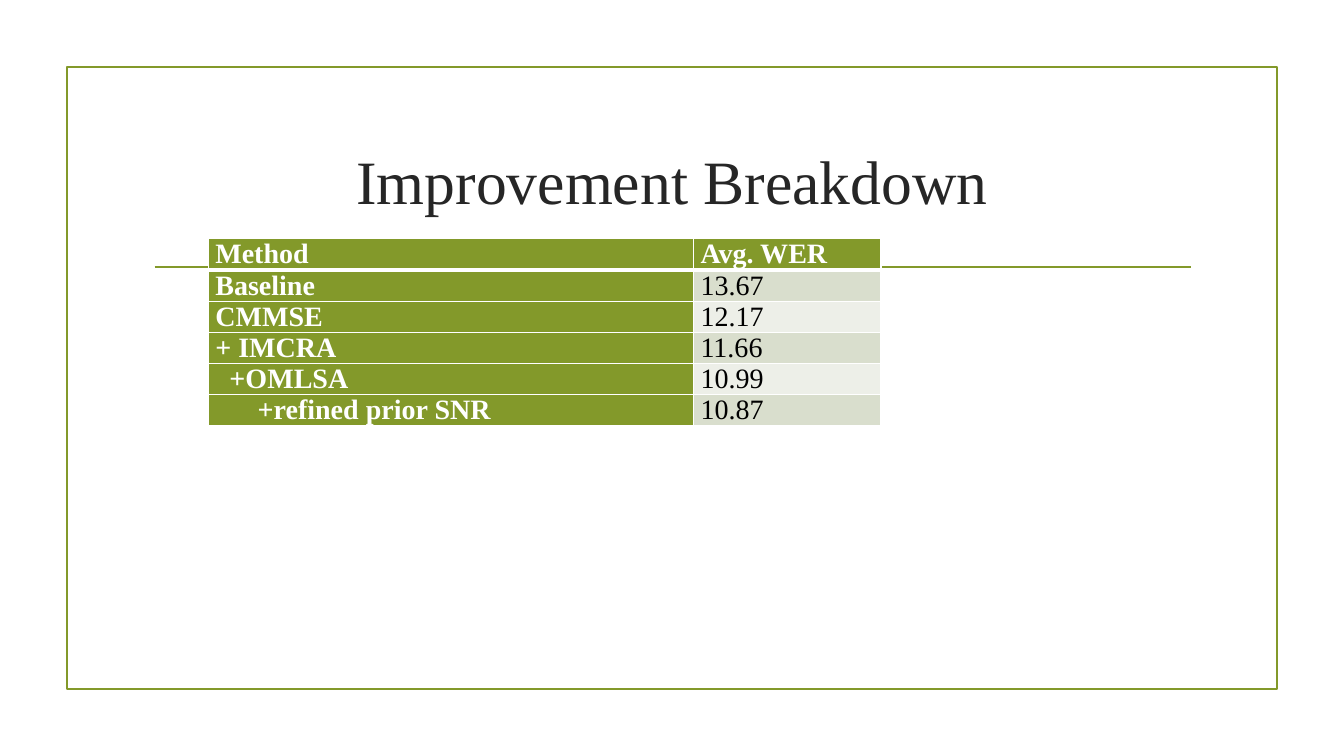
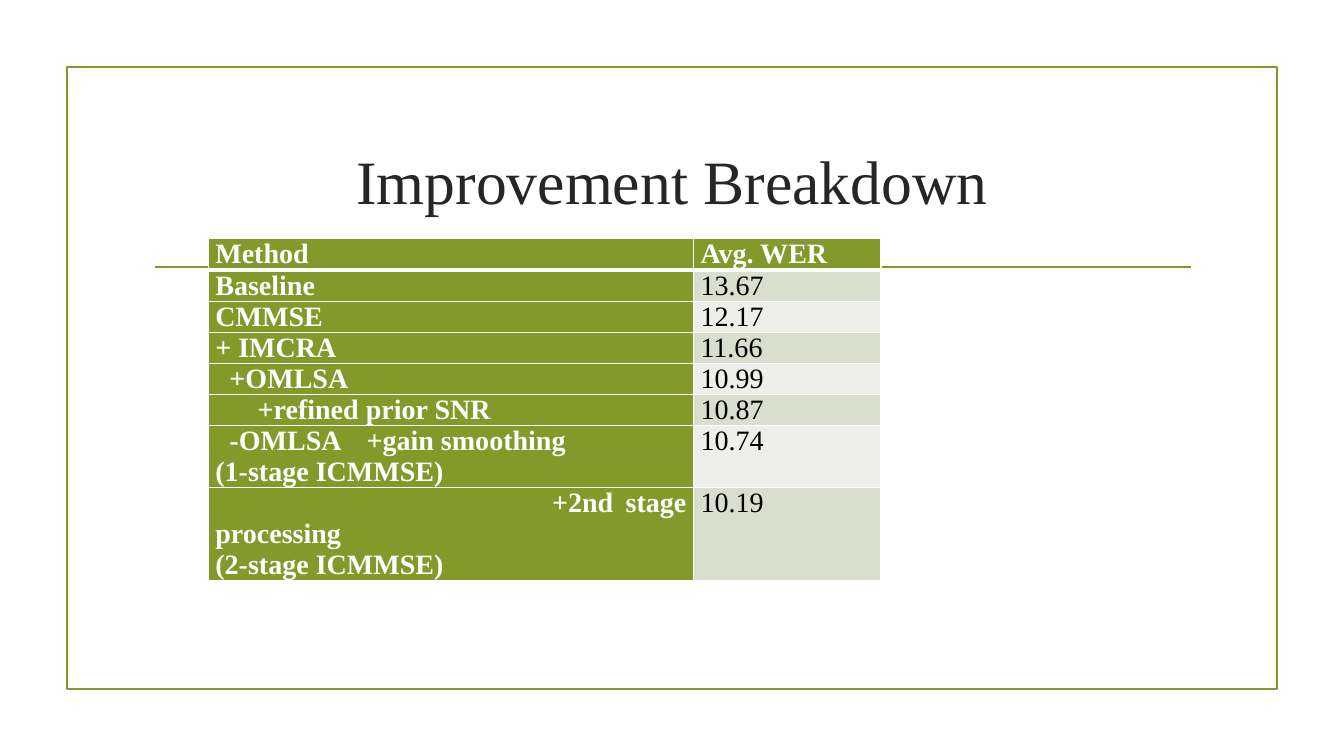
from lxml.etree import SubElement
from pptx import Presentation
from pptx.dml.color import RGBColor
from pptx.enum.shapes import MSO_CONNECTOR as Connector, MSO_SHAPE as Shape
from pptx.enum.text import MSO_ANCHOR as Anchor, PP_ALIGN as Align
from pptx.oxml import parse_xml
from pptx.oxml.ns import nsdecls, qn
from pptx.util import Inches, Pt

GREEN, INK, WHITE, BLACK = "83992A", "262626", "FFFFFF", "000000"
BANDS = ["D9DECD", "EDEFE8"]
FONT = "Times New Roman"

deck = Presentation()
deck.slide_width, deck.slide_height = Inches(13.33), Inches(7.5)
col, row = deck.slide_width / 100, deck.slide_height / 100  # 100 x 100 grid


def paint(target, color):
    """Give a fill or a line one solid colour."""
    target.solid()
    target.fore_color.rgb = RGBColor.from_string(color)


def write(paragraph, text, size, color, bold, align):
    paragraph.alignment = align
    run = paragraph.add_run()
    run.text = text
    run.font.name, run.font.size, run.font.bold = FONT, Pt(size), bold
    paint(run.font.fill, color)


# Shared layout: title position, frame and rule
layout = deck.slide_layouts[5]
title_area, *footers = layout.placeholders
for footer in footers:
    footer.element.getparent().remove(footer.element)
title_area.left, title_area.top = int(10.65 * col), int(14.3 * row)
title_area.width, title_area.height = int(78.75 * col), int(19.1 * row)
title_area.text_frame.vertical_anchor = Anchor.MIDDLE

slides = [deck.slides.add_slide(layout) for _ in range(2)]
drawing = slides[0].shapes
frame = drawing.add_shape(Shape.RECTANGLE, int(5 * col), int(8.9 * row),
                          int(90 * col), int(82.3 * row))
frame.shadow.inherit = False
frame.fill.background()
rule = drawing.add_connector(Connector.STRAIGHT, int(11.5 * col), int(35.3 * row),
                             int(88.6 * col), int(35.3 * row))
SubElement(rule.element.spPr, qn("a:effectLst"))
for ornament in (frame, rule):
    paint(ornament.line.fill, GREEN)
    ornament.line.width = Pt(1.25)
    layout.shapes.element.append(ornament.element)  # move to the layout

# Results: method lines, first-line indent in inches, average WER
results = [
    (["Method"], 0, "Avg. WER"),
    (["Baseline"], 0, "13.67"),
    (["CMMSE"], 0, "12.17"),
    (["+ IMCRA"], 0, "11.66"),
    (["+OMLSA"], 0.14, "10.99"),
    (["+refined prior SNR"], 0.42, "10.87"),
    (["-OMLSA\t+gain smoothing", "(1-stage ICMMSE)"], 0.14, "10.74"),
    (["+2nd stage processing", "(2-stage ICMMSE)"], 3.34, "10.19"),
]
GAIN_TAB = Inches(1.52)

for slide, row_count in zip(slides, (6, 8)):
    write(slide.shapes.title.text_frame.paragraphs[0], "Improvement Breakdown",
          44, INK, False, Align.CENTER)

    # Table
    table = slide.shapes.add_table(row_count, 2, int(15.5 * col), int(31.6 * row),
                                   int(50.05 * col), int(4 * row) * row_count).table
    for column, share in zip(table.columns, (36.1, 13.95)):
        column.width = int(share * col)

    for r, (methods, indent, wer) in enumerate(results[:row_count]):
        for c, lines in enumerate((methods, [wer])):
            cell = table.cell(r, c)
            cell.margin_left = cell.margin_right = Inches(0.07)
            cell.margin_top = cell.margin_bottom = 0
            is_label = r == 0 or c == 0

            # Borders come before the fill; the header has a thick lower edge
            properties = cell._tc.get_or_add_tcPr()
            for side in "LRTB":
                thick = (r, side) in ((0, "B"), (1, "T"))
                properties.append(parse_xml(
                    f'<a:ln{side} {nsdecls("a")} w="{Pt(3 if thick else 1)}"><a:solidFill>'
                    f'<a:srgbClr val="{WHITE}"/></a:solidFill></a:ln{side}>'))
            paint(cell.fill, GREEN if is_label else BANDS[(r - 1) % 2])

            for i, line in enumerate(lines):
                text = cell.text_frame
                paragraph = text.paragraphs[0] if i == 0 else text.add_paragraph()
                layout_props = paragraph._p.get_or_add_pPr()
                if c == 0 and i == 0 and indent:
                    layout_props.set("marL", "0")
                    layout_props.set("indent", str(Inches(indent)))
                if "\t" in line:
                    tabs = SubElement(layout_props, qn("a:tabLst"))
                    SubElement(tabs, qn("a:tab"), pos=str(GAIN_TAB), algn="l")
                write(paragraph, line, 20, WHITE if is_label else BLACK,
                      is_label, Align.JUSTIFY)

deck.save("out.pptx")
